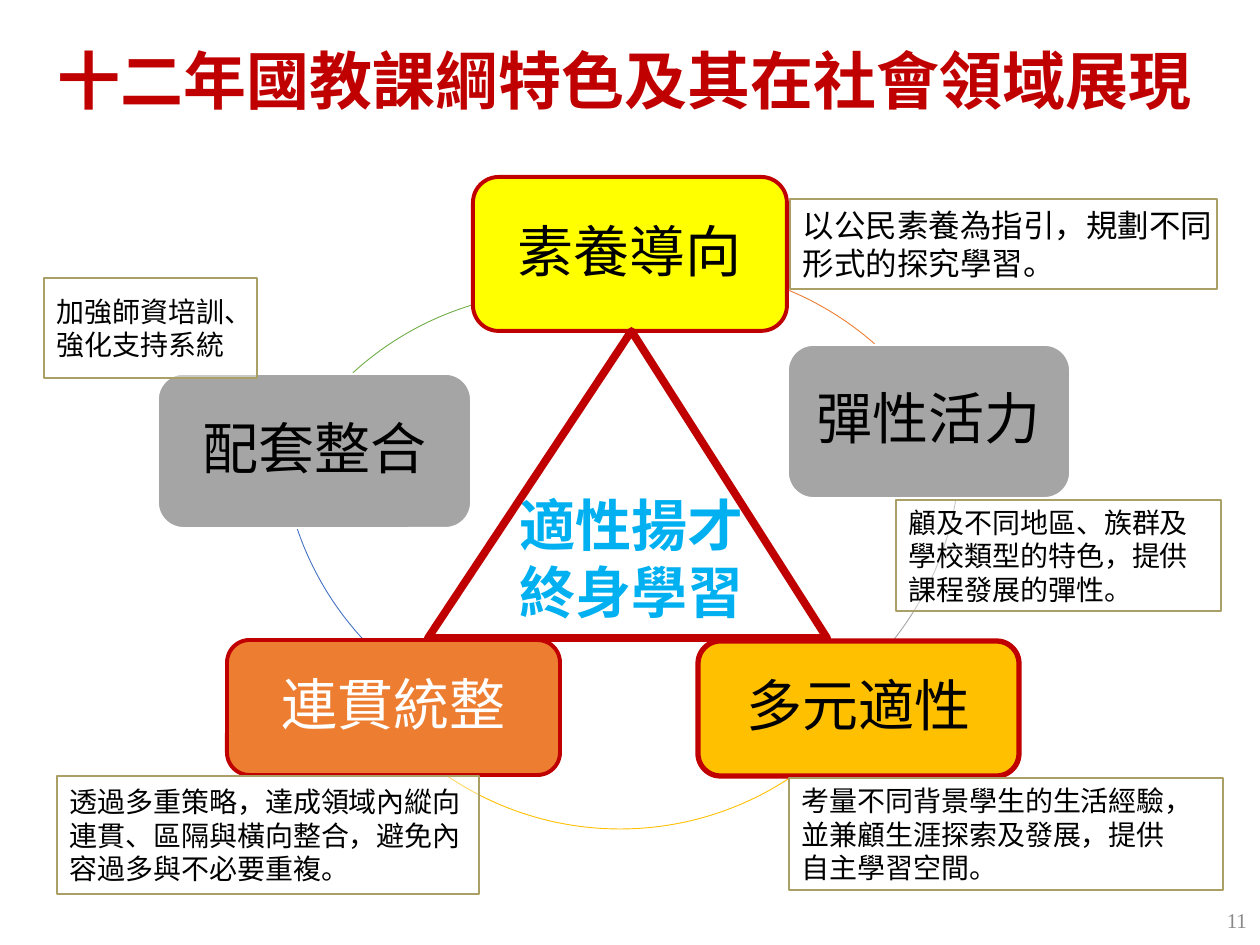
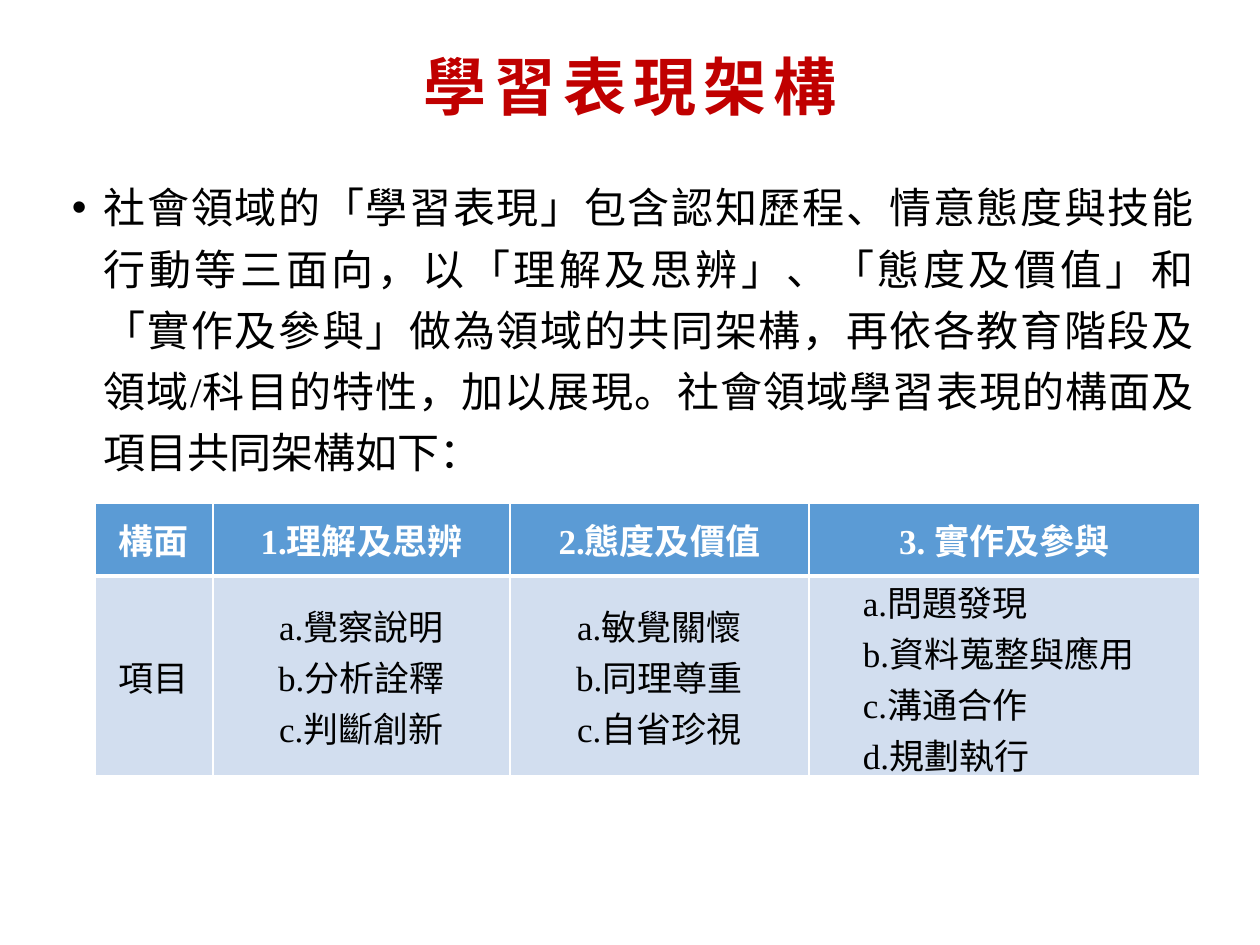
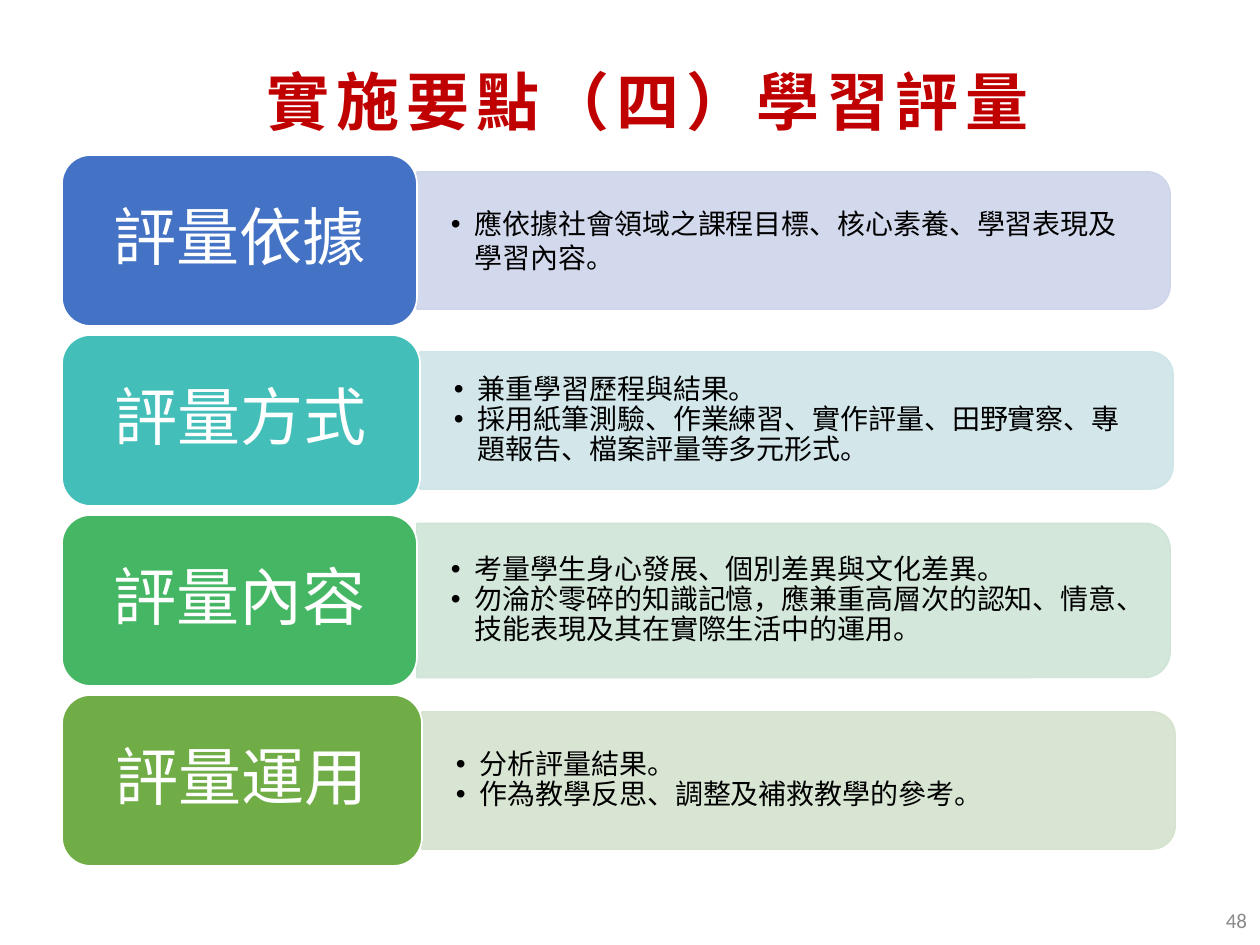
from lxml import etree
from pptx import Presentation
from pptx import util as u
from pptx.dml.color import RGBColor
from pptx.enum import shapes, text
from pptx.oxml.ns import qn

PX = 914400 / 126
CJK, SERIF, SANS = "Noto Sans CJK SC", "Times New Roman", "Calibri"
LEFT, CENTER, RIGHT, JUSTIFY = (text.PP_ALIGN.LEFT, text.PP_ALIGN.CENTER,
                                text.PP_ALIGN.RIGHT, text.PP_ALIGN.JUSTIFY)
TOP, MIDDLE = text.MSO_ANCHOR.TOP, text.MSO_ANCHOR.MIDDLE
SHAPE = shapes.MSO_SHAPE

WHITE = RGBColor(0xFF, 0xFF, 0xFF)
BLACK = RGBColor(0, 0, 0)
RED = RGBColor(0xC0, 0, 0)
PAGE_GRAY = RGBColor(0x89, 0x89, 0x89)
YELLOW = RGBColor(0xFF, 0xFF, 0)
GRAY = RGBColor(0xA5, 0xA5, 0xA5)
GOLD = RGBColor(0xFF, 0xC0, 0)
ORANGE = RGBColor(0xED, 0x7D, 0x31)
BLUE = RGBColor(0x44, 0x72, 0xC4)
GREEN = RGBColor(0x70, 0xAD, 0x47)
SKY = RGBColor(0, 0xB0, 0xF0)
KHAKI = RGBColor(0xAA, 0xA0, 0x66)
TEAL = RGBColor(0x43, 0xBE, 0xB9)
EMERALD = RGBColor(0x45, 0xB6, 0x64)
PALE_BLUE = RGBColor(0xCF, 0xD5, 0xEA)
PALE_TEAL = RGBColor(0xCF, 0xE5, 0xE8)
PALE_EMERALD = RGBColor(0xCF, 0xE5, 0xD8)
PALE_GREEN = RGBColor(0xD5, 0xE3, 0xCF)
HEADER_BLUE = RGBColor(0x5B, 0x9B, 0xD5)
CELL_BLUE = RGBColor(0xD2, 0xDE, 0xEF)


def px(length):
    return u.Emu(round(length * PX))


def emu_box(box):
    return [px(length) for length in box]


def write(frame, lines, size, color=BLACK, font=CJK, bold=False, align=LEFT,
          anchor=MIDDLE, spacing=None, tracking=0, bullet=False, indent=0,
          margins=(13, 6), wrap=True):
    """Fill a text frame; margins are (side, top and bottom) in px."""
    frame.word_wrap = wrap
    frame.vertical_anchor = anchor
    frame.margin_left = frame.margin_right = px(margins[0])
    frame.margin_top = frame.margin_bottom = px(margins[1])
    for i, line in enumerate(lines):
        paragraph = frame.add_paragraph() if i else frame.paragraphs[0]
        paragraph.add_run().text = line
        style_paragraph(paragraph, size, color, font, bold, align, spacing,
                        tracking, bullet, indent)


def style_paragraph(paragraph, size, color, font=CJK, bold=False, align=LEFT,
                    spacing=None, tracking=0, bullet=False, indent=0):
    props = paragraph._p.get_or_add_pPr()
    if indent:
        props.set("marL", str(px(indent)))
    if bullet:
        props.set("indent", str(-px(indent)))
        etree.SubElement(props, qn("a:buFont"), typeface="Arial")
        etree.SubElement(props, qn("a:buChar"), char="•")
    paragraph.alignment = align
    paragraph.line_spacing = spacing
    paragraph.font.size = u.Pt(size)
    paragraph.font.bold = bold
    paragraph.font.color.rgb = color
    paragraph.font.name = font
    run_defaults = props.find(qn("a:defRPr"))
    etree.SubElement(run_defaults, qn("a:ea"), typeface=CJK)
    if tracking:
        run_defaults.set("spc", str(tracking * 100))


def add_text(slide, box, lines, size, **style):
    write(slide.shapes.add_textbox(*emu_box(box)).text_frame, lines, size, **style)


def add_outline(slide, kind, box, fill, line, width, opacity=None):
    """Add a preset shape; opacity is the percentage of its fill."""
    shape = slide.shapes.add_shape(kind, *emu_box(box))
    shape.shadow.inherit = False
    if fill is None:
        shape.fill.background()
    else:
        shape.fill.solid()
        shape.fill.fore_color.rgb = fill
    if opacity:
        for color in shape._element.spPr.iter(qn("a:srgbClr")):
            etree.SubElement(color, qn("a:alpha"), val=str(opacity * 1000))
    shape.line.color.rgb = line
    shape.line.width = u.Pt(width)
    return shape


def add_title(slide, title, box, align=CENTER, tracking=4):
    add_text(slide, box, [title], 36, color=RED, bold=True, align=align,
             tracking=tracking)


def add_page_number(slide, number, font):
    add_text(slide, (977, 895, 283, 50), [number], 12, color=PAGE_GRAY,
             font=font, align=RIGHT)


def add_arc(slide, left, top, start, end, color):
    """Draw part of the ring, clockwise between two angles in degrees."""
    diameter = 616
    arc = add_outline(slide, SHAPE.ARC, (left, top, diameter, diameter), None, color, 0.5)
    for i, degrees in enumerate((start, end)):
        arc.adjustments[i] = degrees * 0.6


def add_feature(slide, box, name, fill, line, width, color=BLACK):
    feature = add_outline(slide, SHAPE.ROUNDED_RECTANGLE, box, fill, line, width)
    write(feature.text_frame, [name], 32, color=color, align=CENTER, spacing=0.9,
          margins=(16, 16))


def add_callout(slide, box, lines, size=16):
    callout = add_outline(slide, SHAPE.RECTANGLE, box, WHITE, KHAKI, 0.75, opacity=40)
    write(callout.text_frame, lines, size, wrap=False)


def build_features(slide):
    add_arc(slide, 363, 267, 292.2, 311.4, ORANGE)
    add_arc(slide, 344, 141, 9.6, 38.5, GRAY)
    add_arc(slide, 312, 213, 56.9, 123.8, GOLD)
    add_arc(slide, 281, 122, 137.2, 161.2, BLUE)
    add_arc(slide, 253, 292, 227.5, 253, GREEN)

    add_feature(slide, (473, 177, 314, 154), "素養導向", YELLOW, RED, 2.25)
    add_feature(slide, (788, 345, 282, 153), "彈性活力", GRAY, WHITE, 1)
    add_feature(slide, (698, 641, 321, 135), "多元適性", GOLD, RED, 3)
    add_feature(slide, (227, 640, 333, 135), "連貫統整", ORANGE, RED, 2.25, WHITE)
    add_feature(slide, (158, 374, 313, 154), "配套整合", GRAY, WHITE, 1)

    add_page_number(slide, "11", SERIF)
    add_text(slide, (483, 483, 297, 149), ["適性揚才", "終身學習"], 32,
             color=SKY, bold=True, align=CENTER)
    triangle = add_outline(slide, SHAPE.ISOSCELES_TRIANGLE, (428, 331, 399, 307),
                           None, RED, 4.5)
    triangle.adjustments[0] = 0.51
    add_title(slide, "十二年國教課綱特色及其在社會領域展現", (45, 35, 1171, 89),
              align=LEFT, tracking=0)

    add_callout(slide, (790, 199, 427, 90),
                ["以公民素養為指引，規劃不同", "形式的探究學習。"], 18)
    add_callout(slide, (896, 500, 325, 111),
                ["顧及不同地區、族群及", "學校類型的特色，提供", "課程發展的彈性。"])
    add_callout(slide, (789, 778, 434, 112),
                ["考量不同背景學生的生活經驗，", "並兼顧生涯探索及發展，提供",
                 "自主學習空間。"])
    add_callout(slide, (57, 776, 422, 118),
                ["透過多重策略，達成領域內縱向", "連貫、區隔與橫向整合，避免內",
                 "容過多與不必要重複。"])
    add_callout(slide, (44, 278, 213, 100), ["加強師資培訓、", "強化支持系統"])


def add_borders(cell, **widths):
    """Draw white cell borders; widths are points by side: L, R, T, B."""
    props = cell._tc.get_or_add_tcPr()
    for side, width in widths.items():
        border = etree.SubElement(props, qn(f"a:ln{side}"), w=str(u.Pt(width)))
        fill = etree.SubElement(border, qn("a:solidFill"))
        etree.SubElement(fill, qn("a:srgbClr"), val=str(WHITE))


def add_framework_table(slide, left, top):
    column_widths, row_heights = (118, 297, 299, 391), (73, 200)
    aspects = ["構面", "1.理解及思辨", "2.態度及價值", "3. 實作及參與"]
    items = [
        ["項目"],
        ["a.覺察說明", "b.分析詮釋", "c.判斷創新"],
        ["a.敏覺關懷", "b.同理尊重", "c.自省珍視"],
        ["a.問題發現", "b.資料蒐整與應用", "c.溝通合作", "d.規劃執行"],
    ]
    box = (left, top, sum(column_widths), sum(row_heights))
    table = slide.shapes.add_table(2, 4, *emu_box(box)).table
    for row, height in zip(table.rows, row_heights):
        row.height = px(height)
    for i, width in enumerate(column_widths):
        table.columns[i].width = px(width)
        header, body = table.cell(0, i), table.cell(1, i)
        add_borders(header, L=1, R=1, T=1, B=3)
        add_borders(body, L=1, R=1, T=3, B=1)
        fill_cell(header, [aspects[i]], HEADER_BLUE, WHITE, bold=True)
        if i == 3:
            fill_cell(body, items[i], CELL_BLUE, BLACK, align=LEFT, indent=45)
        else:
            fill_cell(body, items[i], CELL_BLUE, BLACK)


def fill_cell(cell, lines, fill, color, bold=False, align=CENTER, indent=0):
    cell.fill.solid()
    cell.fill.fore_color.rgb = fill
    cell.vertical_anchor = MIDDLE
    cell.margin_left = cell.margin_right = px(9)
    cell.margin_top = cell.margin_bottom = 0
    for i, line in enumerate(lines):
        frame = cell.text_frame
        paragraph = frame.add_paragraph() if i else frame.paragraphs[0]
        paragraph.add_run().text = line
        style_paragraph(paragraph, 20, color, SERIF, bold, align, indent=indent)


def build_framework(slide):
    add_title(slide, "學習表現架構", (0, 35, 1260, 100))
    add_text(slide, (59, 165, 1148, 330), [
        "社會領域的「學習表現」包含認知歷程、情意態度與技能行動等三面向，"
        "以「理解及思辨」、「態度及價值」和「實作及參與」做為領域的共同架構，"
        "再依各教育階段及領域/科目的特性，加以展現。"
        "社會領域學習表現的構面及項目共同架構如下："],
        24, font=SERIF, align=JUSTIFY, anchor=TOP, spacing=u.Pt(35),
        bullet=True, indent=32)
    add_framework_table(slide, 95, 503)


def add_assessment_row(slide, label_box, band_height, name, points, fill, pale, spacing):
    left, top, width, height = label_box
    band_left, band_width = left + width, 753
    middle = top + height / 2
    # The band is a top-rounded shape turned a quarter to the right.
    band = add_outline(slide, SHAPE.ROUND_2_SAME_RECTANGLE,
                       (band_left + (band_width - band_height) / 2,
                        middle - band_width / 2, band_height, band_width),
                       pale, pale, 1, opacity=90)
    band.rotation = 90
    text_height = band_height - 14
    add_text(slide, (band_left, middle - text_height / 2, 746, text_height), points,
             16, spacing=spacing, bullet=True, indent=24, margins=(34, 18))
    label = add_outline(slide, SHAPE.ROUNDED_RECTANGLE, label_box, fill, WHITE, 1)
    write(label.text_frame, [name], 36, color=WHITE, align=CENTER, spacing=0.9,
          margins=(19, 9))


def build_assessment(slide):
    add_title(slide, "實施要點（四）學習評量", (73, 45, 1150, 111))
    add_page_number(slide, "48", SANS)
    rows = [
        ("評量依據", 355, 137, BLUE, PALE_BLUE, 1.0,
         ["應依據社會領域之課程目標、核心素養、學習表現及學習內容。"]),
        ("評量方式", 358, 137, TEAL, PALE_TEAL, 0.9,
         ["兼重學習歷程與結果。",
          "採用紙筆測驗、作業練習、實作評量、田野實察、專題報告、檔案評量等多元形式。"]),
        ("評量內容", 355, 154, EMERALD, PALE_EMERALD, 0.9,
         ["考量學生身心發展、個別差異與文化差異。",
          "勿淪於零碎的知識記憶，應兼重高層次的認知、情意、技能表現及其在實際生活中的運用。"]),
        ("評量運用", 360, 137, GREEN, PALE_GREEN, 0.9,
         ["分析評量結果。", "作為教學反思、調整及補救教學的參考。"]),
    ]
    for i, (name, width, band_height, fill, pale, spacing, points) in enumerate(rows):
        add_assessment_row(slide, (62, 155 + 180 * i, width, 171), band_height,
                           name, points, fill, pale, spacing)


def main():
    deck = Presentation()
    deck.slide_width, deck.slide_height = px(1260), px(945)
    for build in (build_features, build_framework, build_assessment):
        build(deck.slides.add_slide(deck.slide_layouts[6]))
    deck.save("out.pptx")


if __name__ == "__main__":
    main()
